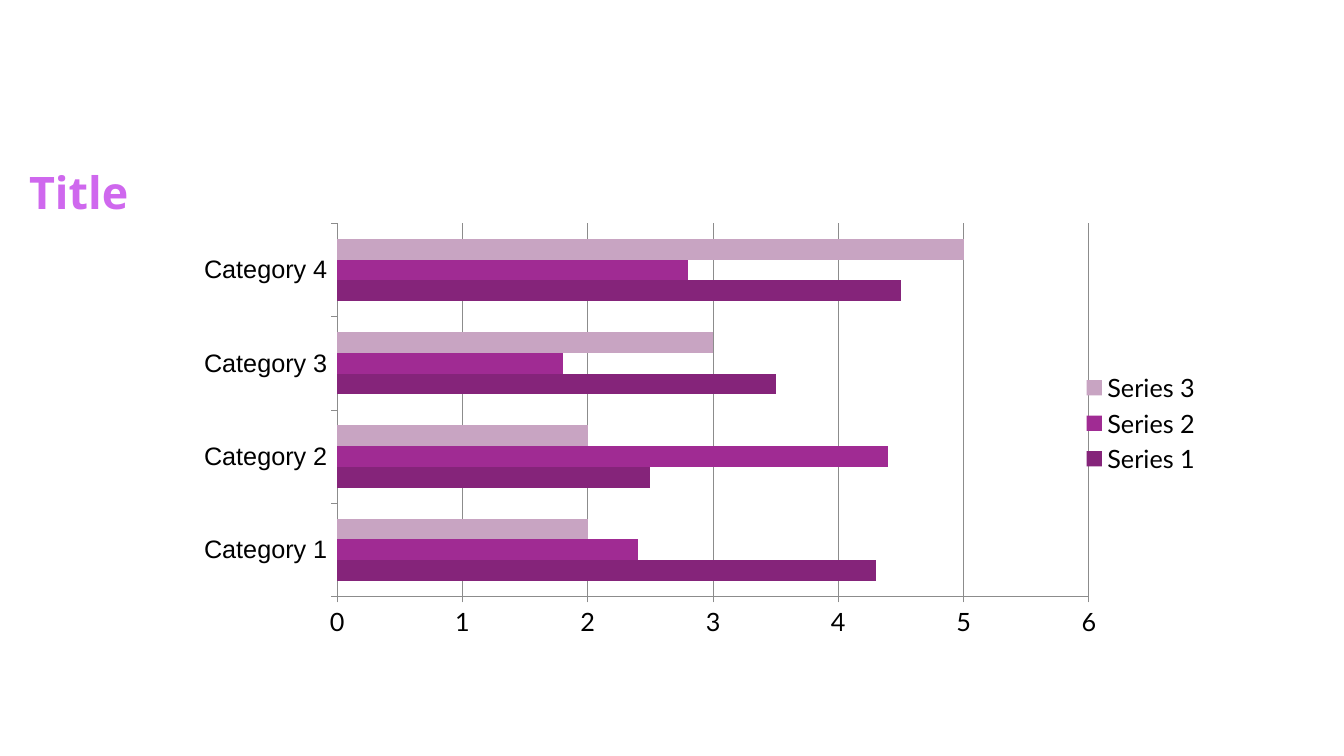
import pptx
import pptx.chart.data
import pptx.dml.color
import pptx.enum.chart
import pptx.enum.text
import pptx.oxml
import pptx.oxml.ns
import pptx.util
from dataclasses import dataclass

Pt = pptx.util.Pt


@dataclass(frozen=True)
class Theme:
    title_color: str = "CF68EE"
    text_color: str = "000000"
    rule_color: str = "8C8C8C"
    series_colors: tuple = ("85247A", "A02B93", "C8A4C2")
    title_font: str = "Open Sans"
    chart_font: str = "Lato"
    category_font: str = "Arial"
    title_size: int = 32
    chart_size: int = 18
    rule_width: float = 0.5


def rgb(color):
    return pptx.dml.color.RGBColor.from_string(color)


def apply(target, **values):
    for name, value in values.items():
        setattr(target, name, value)


class SlideBuilder:
    def __init__(self, slide, theme):
        self.slide = slide
        self.theme = theme

    def style_font(self, font, name, size, color, bold=False):
        apply(font, name=name, size=Pt(size), bold=bold)
        font.color.rgb = rgb(color)

    def style_rule(self, line):
        line.color.rgb = rgb(self.theme.rule_color)
        line.width = Pt(self.theme.rule_width)

    def title(self, text, left, top, width, height):
        frame = self.slide.shapes.add_textbox(
            Pt(left), Pt(top), Pt(width), Pt(height)).text_frame
        apply(frame, word_wrap=True,
              auto_size=pptx.enum.text.MSO_AUTO_SIZE.SHAPE_TO_FIT_TEXT)
        heading = frame.paragraphs[0].add_run()
        heading.text = text
        self.style_font(heading.font, self.theme.title_font,
                        self.theme.title_size, self.theme.title_color, True)

    def style_axis(self, axis, font_name, gridlines):
        apply(axis, has_major_gridlines=gridlines,
              major_tick_mark=pptx.enum.chart.XL_TICK_MARK.OUTSIDE,
              minor_tick_mark=pptx.enum.chart.XL_TICK_MARK.NONE)
        self.style_font(axis.tick_labels.font, font_name,
                        self.theme.chart_size, self.theme.text_color)
        self.style_rule(axis.format.line)
        if gridlines:
            self.style_rule(axis.major_gridlines.format.line)

    def place_plot(self, chart, x, y, w, h):
        # Fix the inner plot area as fractions of the chart
        plot_area = chart.element.find(".//" + pptx.oxml.ns.qn("c:plotArea"))
        for automatic in plot_area.findall(pptx.oxml.ns.qn("c:layout")):
            plot_area.remove(automatic)
        fractions = "".join(f'<c:{tag} val="{value}"/>' for tag, value in
                            zip("xywh", (x, y, w, h)))
        plot_area.insert(0, pptx.oxml.parse_xml(
            f'<c:layout {pptx.oxml.ns.nsdecls("c")}><c:manualLayout>'
            '<c:layoutTarget val="inner"/><c:xMode val="edge"/>'
            f'<c:yMode val="edge"/>{fractions}</c:manualLayout></c:layout>'))

    def bar_chart(self, categories, series, left, top, width, height, plot_box):
        theme = self.theme
        figures = pptx.chart.data.CategoryChartData()
        figures.categories = categories
        for name, values in series.items():
            figures.add_series(name, values)
        chart = self.slide.shapes.add_chart(
            pptx.enum.chart.XL_CHART_TYPE.BAR_CLUSTERED,
            Pt(left), Pt(top), Pt(width), Pt(height), figures).chart
        apply(chart, has_title=False, has_legend=True)
        self.style_font(chart.font, theme.chart_font, theme.chart_size,
                        theme.text_color)

        # Bars
        bars = chart.plots[0]
        apply(bars, gap_width=150, overlap=0, vary_by_categories=False)
        for bar_series, color in zip(bars.series, theme.series_colors):
            bar_series.format.fill.solid()
            bar_series.format.fill.fore_color.rgb = rgb(color)

        # Axes
        self.style_axis(chart.category_axis, theme.category_font, False)
        self.style_axis(chart.value_axis, theme.chart_font, True)
        apply(chart.value_axis, minimum_scale=0, maximum_scale=6, major_unit=1)

        # Legend
        apply(chart.legend, include_in_layout=False,
              position=pptx.enum.chart.XL_LEGEND_POSITION.RIGHT)
        self.style_font(chart.legend.font, theme.chart_font, theme.chart_size,
                        theme.text_color)
        self.place_plot(chart, *plot_box)


def main():
    deck = pptx.Presentation()
    apply(deck, slide_width=Pt(960), slide_height=Pt(540))
    builder = SlideBuilder(deck.slides.add_slide(deck.slide_layouts[6]), Theme())

    # Heading
    builder.title("Title", 13.7, 113.8, 477.4, 46)

    # Series by category
    builder.bar_chart(
        [f"Category {number}" for number in range(1, 5)],
        {"Series 1": (4.3, 2.5, 3.5, 4.5),
         "Series 2": (2.4, 4.4, 1.8, 2.8),
         "Series 3": (2, 2, 3, 5)},
        116.6, 143.3, 748.8, 318.2, plot_box=(0.166, 0.051, 0.717, 0.838))

    deck.save("out.pptx")


if __name__ == "__main__":
    main()
